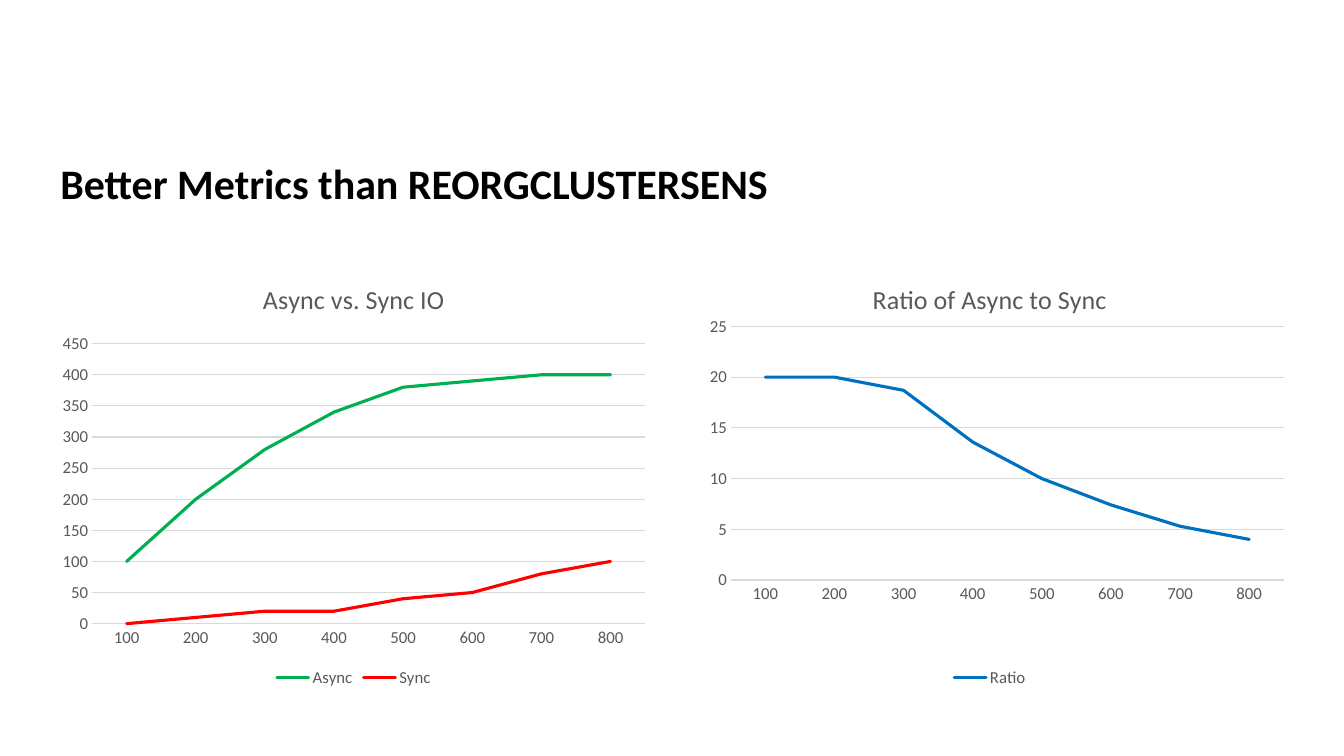
from dataclasses import dataclass
from typing import Optional

from lxml.etree import SubElement
from pptx import Presentation
from pptx.chart.data import CategoryChartData
from pptx.dml.color import RGBColor
from pptx.enum.chart import XL_CHART_TYPE, XL_LEGEND_POSITION, XL_TICK_MARK
from pptx.enum.text import MSO_ANCHOR
from pptx.oxml import parse_xml
from pptx.oxml.ns import nsdecls, qn
from pptx.util import Pt

FONT = "Calibri"
BLACK = RGBColor(0x00, 0x00, 0x00)
GRAY = RGBColor(0x59, 0x59, 0x59)
GRID = RGBColor(0xD9, 0xD9, 0xD9)
GREEN = RGBColor(0x00, 0xB0, 0x50)
RED = RGBColor(0xFF, 0x00, 0x00)
BLUE = RGBColor(0x00, 0x70, 0xC0)

CATEGORIES = [str(n) for n in range(100, 900, 100)]
CHART_TOP, CHART_HEIGHT = 187.92, 306


@dataclass
class Line:
    name: str
    values: list[float]
    color: RGBColor


@dataclass
class LineChart:
    title: str
    left: float
    width: float
    top_value: float
    step: float
    lines: list[Line]
    plot: Optional[dict[str, float]] = None  # fractions of the chart area


CHARTS = [
    LineChart("Async vs. Sync IO", 36, 433.44, 450, 50, [
        Line("Async", [100, 200, 280, 340, 380, 390, 400, 400], GREEN),
        Line("Sync", [0, 10, 20, 20, 40, 50, 80, 100], RED),
    ]),
    LineChart("Ratio of Async to Sync", 480.24, 453.6, 25, 5, [
        Line("Ratio", [20, 20, 18.7, 13.6, 10, 7.4, 5.3, 4], BLUE),
    ], {"x": 0.092, "y": 0.148, "w": 0.871, "h": 0.592}),
]


def style_font(font, size: float, color: RGBColor, bold: bool = False) -> None:
    font.name = FONT
    font.size = Pt(size)
    font.bold = bold
    font.color.rgb = color


def style_line(line, color: RGBColor, width: float) -> None:
    line.color.rgb = color
    line.width = Pt(width)


def place_plot(chart, plot: dict[str, float]) -> None:
    area = chart._chartSpace.chart.plotArea
    for old in area.findall(qn("c:layout")):
        area.remove(old)
    layout = parse_xml(f"<c:layout {nsdecls('c')}/>")
    manual = SubElement(layout, qn("c:manualLayout"))
    settings = {"layoutTarget": "inner", "xMode": "edge", "yMode": "edge", **plot}
    for tag, value in settings.items():
        SubElement(manual, qn(f"c:{tag}")).set("val", str(value))
    area.insert(0, layout)


def add_title(slide, text: str) -> None:
    s = slide.shapes.add_textbox(Pt(36), Pt(101.52), Pt(771.84), Pt(62.64))
    tf = s.text_frame
    tf.word_wrap = True
    tf.vertical_anchor = MSO_ANCHOR.MIDDLE
    tf.text = text
    p = tf.paragraphs[0]
    p.line_spacing = 0.9
    style_font(p.runs[0].font, 30, BLACK, bold=True)


def add_line_chart(slide, item: LineChart) -> None:
    data = CategoryChartData()
    data.categories = CATEGORIES
    for line in item.lines:
        data.add_series(line.name, line.values)
    chart = slide.shapes.add_chart(
        XL_CHART_TYPE.LINE, Pt(item.left), Pt(CHART_TOP),
        Pt(item.width), Pt(CHART_HEIGHT), data).chart
    style_font(chart.font, 10, BLACK)

    # Title and legend
    chart.has_title = True
    tf = chart.chart_title.text_frame
    tf.text = item.title
    style_font(tf.paragraphs[0].runs[0].font, 18.6, GRAY)
    chart.chart_title.include_in_layout = False
    chart.has_legend = True
    chart.legend.position = XL_LEGEND_POSITION.BOTTOM
    chart.legend.include_in_layout = False
    style_font(chart.legend.font, 12, GRAY)

    # Axes
    for axis in (chart.category_axis, chart.value_axis):
        axis.major_tick_mark = XL_TICK_MARK.NONE
        axis.minor_tick_mark = XL_TICK_MARK.NONE
        style_font(axis.tick_labels.font, 12, GRAY)
    style_line(chart.category_axis.format.line, GRID, 0.75)
    values = chart.value_axis
    values.minimum_scale, values.maximum_scale = 0, item.top_value
    values.major_unit = item.step
    values.format.line.fill.background()
    values.has_major_gridlines = True
    style_line(values.major_gridlines.format.line, GRID, 0.75)

    # Lines
    chart.plots[0].vary_by_categories = False
    for series, line in zip(chart.plots[0].series, item.lines):
        series.smooth = False
        style_line(series.format.line, line.color, 2.25)
        series.format.line._ln.set("cap", "rnd")
    if item.plot:
        place_plot(chart, item.plot)


def main() -> None:
    prs = Presentation()
    prs.slide_width, prs.slide_height = Pt(960), Pt(540)
    slide = prs.slides.add_slide(prs.slide_layouts[6])
    add_title(slide, "Better Metrics than REORGCLUSTERSENS")
    for item in CHARTS:
        add_line_chart(slide, item)
    prs.save("out.pptx")


if __name__ == "__main__":
    main()
